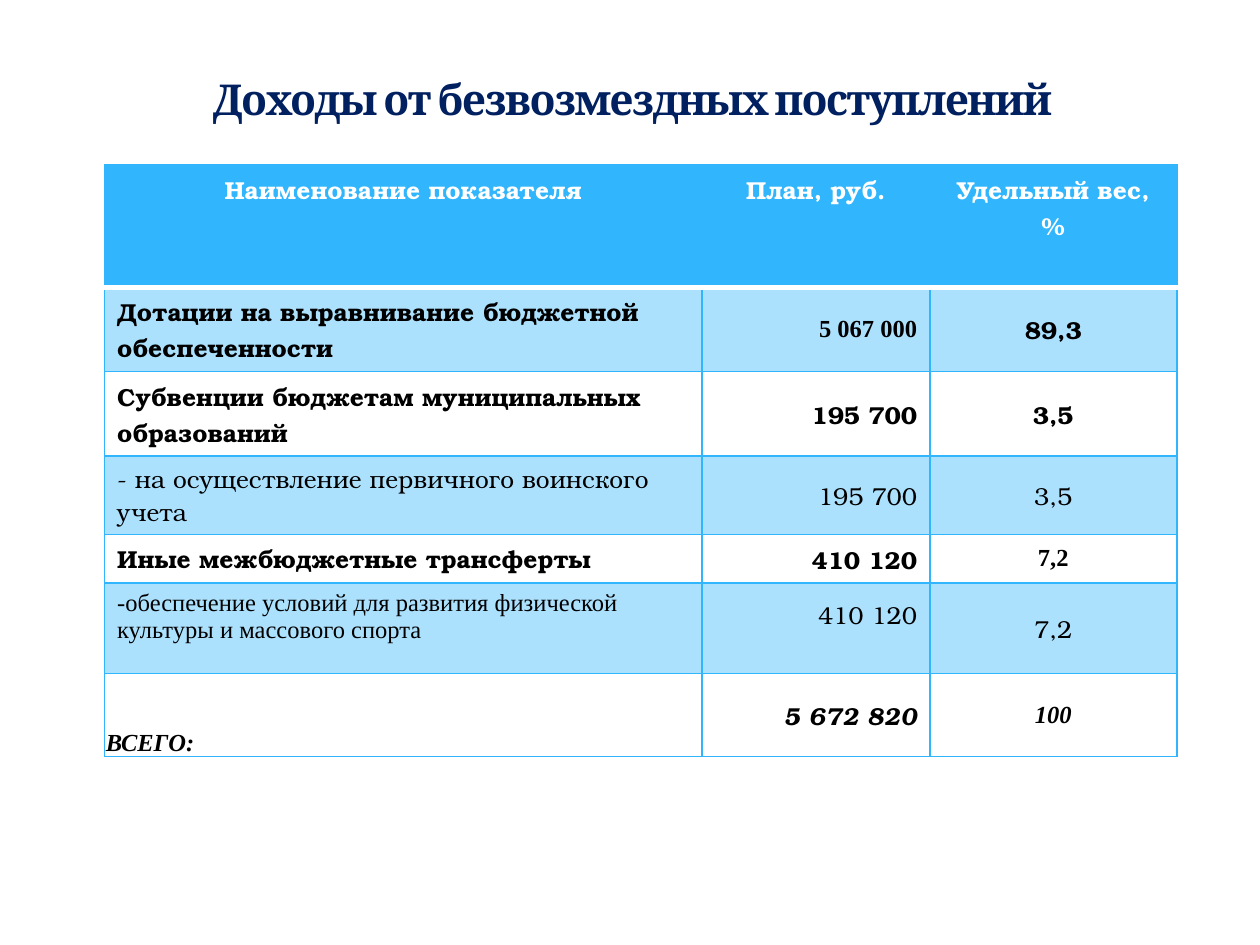
import pptx
import pptx.util
import pptx.dml.color
import pptx.enum.text
import pptx.oxml
import pptx.oxml.ns
import lxml.etree

Inches = pptx.util.Inches
Pt = pptx.util.Pt
RGB = pptx.dml.color.RGBColor.from_string
ALIGN = pptx.enum.text.PP_ALIGN
ANCHOR = pptx.enum.text.MSO_ANCHOR

THEME = {
    "navy": "002060", "accent": "31B6FD", "white": "FFFFFF", "ink": "000000",
    "band_alpha": 40, "title_size": 24.3, "table_size": 14, "title_font": "Cambria",
    "fonts": {"bonum": "TeX Gyre Bonum", "times": "Times New Roman"},
}

TITLE = "Доходы от безвозмездных поступлений"
HEADINGS = ["Наименование показателя", "План, руб.", "Удельный вес, %"]
INCOME = [
    {"texts": ["Дотации на выравнивание бюджетной обеспеченности", "5 067 000", "89,3"],
     "fonts": ["bonum", "times", "bonum"], "bold": True},
    {"texts": ["Субвенции бюджетам муниципальных образований", "195 700", "3,5"],
     "fonts": ["bonum", "bonum", "bonum"], "bold": True},
    {"texts": ["- на осуществление первичного воинского учета", "195 700", "3,5"],
     "fonts": ["bonum", "bonum", "bonum"]},
    {"texts": ["Иные межбюджетные трансферты", "410 120", "7,2"],
     "fonts": ["bonum", "bonum", "times"], "bold": True},
    {"texts": ["-обеспечение условий для развития физической культуры и массового спорта",
               "410 120", "7,2"],
     "fonts": ["times", "bonum", "bonum"]},
    {"texts": ["ВСЕГО:", "5 672 820", "100"],
     "fonts": ["times", "bonum", "times"], "bold": True, "italic": True},
]
COLUMN_WIDTHS = [4.74, 1.81, 1.96]
ROW_HEIGHTS = [0.97, 0.62, 0.62, 0.53, 0.37, 0.72, 0.66]
COLUMN_ALIGN = [ALIGN.LEFT, ALIGN.RIGHT, ALIGN.CENTER]


def style_run(run, font, size, color, bold=False, italic=False):
    run.font.name = font
    run.font.size = Pt(size)
    run.font.color.rgb = RGB(color)
    run.font.bold = bold
    run.font.italic = italic


def fill_cell(cell, color, alpha=100):
    cell.fill.solid()
    cell.fill.fore_color.rgb = RGB(color)
    if alpha < 100:
        swatch = cell._tc.tcPr.find(".//" + pptx.oxml.ns.qn("a:srgbClr"))
        lxml.etree.SubElement(swatch, pptx.oxml.ns.qn("a:alpha"), val=str(alpha * 1000))


def border_cell(cell, sides):
    properties = cell._tc.get_or_add_tcPr()
    for index, side in enumerate("LRTB"):
        color, width = sides.get(side, (THEME["accent"], 1))
        properties.insert(index, pptx.oxml.parse_xml(
            f'<a:ln{side} {pptx.oxml.ns.nsdecls("a")} w="{Pt(width)}">'
            f'<a:solidFill><a:srgbClr val="{color}"/></a:solidFill></a:ln{side}>'))


def write_cell(cell, text, align, font, color, bold, italic=False):
    cell.text_frame.text = text
    paragraph = cell.text_frame.paragraphs[0]
    paragraph.alignment = align
    style_run(paragraph.runs[0], THEME["fonts"][font], THEME["table_size"], color, bold, italic)


def add_title(slide):
    title = slide.shapes.add_textbox(Inches(1.22), Inches(0.36), Inches(7.6), Inches(0.55))
    frame = title.text_frame
    frame.word_wrap = True
    frame.margin_top, frame.margin_bottom = Inches(0.22), 0
    frame.text = TITLE
    frame.paragraphs[0].alignment = ALIGN.CENTER
    run = frame.paragraphs[0].runs[0]
    style_run(run, THEME["title_font"], THEME["title_size"], THEME["navy"], bold=True)
    run.font._element.set("spc", "-100")


def add_income_table(slide):
    table = slide.shapes.add_table(
        len(ROW_HEIGHTS), len(COLUMN_WIDTHS), Inches(0.83), Inches(1.31),
        Inches(sum(COLUMN_WIDTHS)), Inches(sum(ROW_HEIGHTS))).table
    for column, width in zip(table.columns, COLUMN_WIDTHS):
        column.width = Inches(width)
    for row, height in zip(table.rows, ROW_HEIGHTS):
        row.height = Inches(height)

    divider = (THEME["white"], 3)
    for column, heading in enumerate(HEADINGS):
        cell = table.cell(0, column)
        write_cell(cell, heading, ALIGN.CENTER, "bonum", THEME["white"], True)
        fill_cell(cell, THEME["accent"])
        border_cell(cell, {"B": divider})

    for number, income in enumerate(INCOME, 1):
        for column, (text, font) in enumerate(zip(income["texts"], income["fonts"])):
            cell = table.cell(number, column)
            write_cell(cell, text, COLUMN_ALIGN[column], font, THEME["ink"],
                       income.get("bold", False), income.get("italic", False))
            cell.vertical_anchor = ANCHOR.MIDDLE if column else ANCHOR.TOP
            if number % 2:
                fill_cell(cell, THEME["accent"], THEME["band_alpha"])
            else:
                cell.fill.background()
            border_cell(cell, {"T": divider} if number == 1 else {})

    table.cell(5, 1).margin_bottom = Inches(0.27)
    total = table.cell(len(INCOME), 0)
    total.vertical_anchor = ANCHOR.BOTTOM
    total.margin_left = total.margin_right = total.margin_top = Inches(0.01)
    total.margin_bottom = 0


def main():
    presentation = pptx.Presentation()
    presentation.slide_width, presentation.slide_height = Inches(10), Inches(7.5)
    slide = presentation.slides.add_slide(presentation.slide_layouts[6])
    add_income_table(slide)
    add_title(slide)
    presentation.save("out.pptx")


if __name__ == "__main__":
    main()
